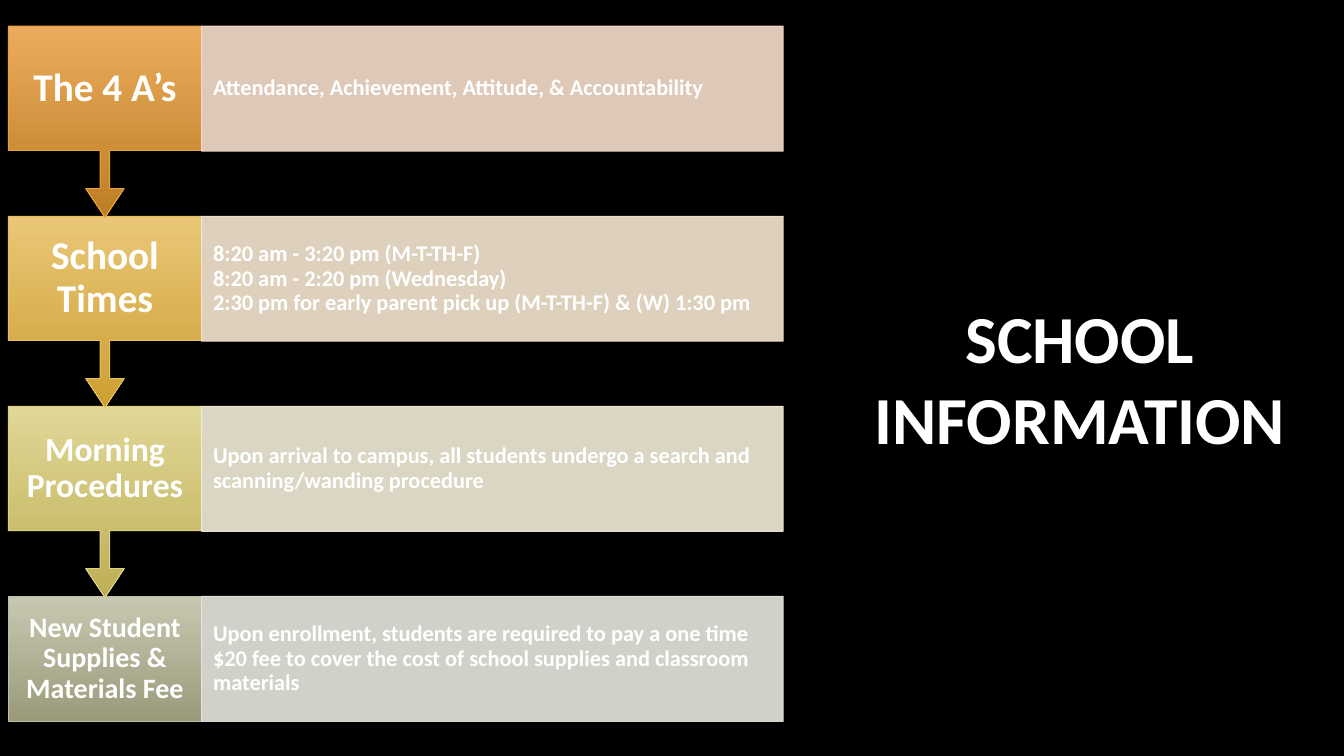
import pptx
import pptx.dml.color
import pptx.enum.shapes
import pptx.enum.text
import pptx.oxml
import pptx.util

SHAPE = pptx.enum.shapes.MSO_SHAPE
ALIGN = pptx.enum.text.PP_ALIGN
ANCHOR = pptx.enum.text.MSO_ANCHOR
EMU_PER_PX = 9525
NS = "http://schemas.openxmlformats.org/drawingml/2006/main"


def px(n):
    return pptx.util.Emu(n * EMU_PER_PX)


def rgb(h):
    return pptx.dml.color.RGBColor.from_string(h)


def set_alpha(fill, color, pct):
    fill.solid()
    fill.fore_color.rgb = rgb(color)
    xml = f'<a:alpha xmlns:a="{NS}" val="{pct * 1000}"/>'
    fill._xPr.find(f"{{{NS}}}solidFill")[0].append(pptx.oxml.parse_xml(xml))


def write(sp, text, size, align=ALIGN.LEFT, spacing=0.9, inset=(11, 21),
          font="Calibri", color="FFFFFF"):
    tf = sp.text_frame
    tf.word_wrap = True
    tf.vertical_anchor = ANCHOR.MIDDLE
    tf.margin_left = tf.margin_right = px(inset[0])
    tf.margin_top = tf.margin_bottom = px(inset[1])
    p = tf.paragraphs[0]
    p.text = text
    p.alignment = align
    p.line_spacing = spacing
    for r in p.runs:
        r.font.name = font
        r.font.size = pptx.util.Pt(size)
        r.font.bold = True
        r.font.color.rgb = rgb(color)


class Deck:
    def __init__(self, background):
        self.prs = pptx.Presentation()
        self.prs.slide_width, self.prs.slide_height = px(1280), px(720)
        self.s = self.prs.slides.add_slide(self.prs.slide_layouts[6])
        self.s.background.fill.solid()
        self.s.background.fill.fore_color.rgb = rgb(background)

    def shape(self, kind, x, y, w, h):
        sp = self.s.shapes.add_shape(kind, px(x), px(y), px(w), px(h))
        sp.shadow.inherit = False
        sp.line.width = pptx.util.Pt(0.75)
        return sp

    def heading(self, x, y, w, h, text, size):
        sp = self.s.shapes.add_textbox(px(x), px(y), px(w), px(h))
        write(sp, text, size, align=ALIGN.CENTER, spacing=1.0, inset=(10, 5))

    def step(self, x, y, w, h, text, size, inset, colors, line, arrow):
        if arrow:
            sp = self.shape(SHAPE.DOWN_ARROW_CALLOUT, x, y, w, 182)
            for i, value in enumerate((0.05, 0.1, 0.15, 0.65)):
                sp.adjustments[i] = value
        else:
            sp = self.shape(SHAPE.RECTANGLE, x, y, w, h)
        sp.fill.gradient()
        sp.fill.gradient_angle = 270
        for stop, position, color in zip(sp.fill.gradient_stops, (0, 1), colors):
            stop.position = position
            stop.color.rgb = rgb(color)
        sp.line.color.rgb = rgb(line)
        write(sp, text, size, align=ALIGN.CENTER, inset=(13, inset))

    def detail(self, x, y, w, h, text, color):
        sp = self.shape(SHAPE.RECTANGLE, x, y, w, h)
        set_alpha(sp.fill, color, 90)
        set_alpha(sp.line.fill, color, 90)
        write(sp, text, 16)


STEPS = [
    ("The 4 A’s", 28, 21, ("EBAB5C", "BD7E25"), "E9A039", "F7DFCE",
     "Attendance, Achievement, Attitude, & Accountability"),
    ("School Times", 28, 21, ("EAC778", "CC9F32"), "E7BF5F", "F6E8D2",
     "8:20 am - 3:20 pm (M-T-TH-F)\n8:20 am - 2:20 pm (Wednesday)\n"
     "2:30 pm for early parent pick up (M-T-TH-F) & (W) 1:30 pm"),
    ("Morning Procedures", 24, 18, ("E1D797", "BDAF55"), "DCD084", "F2EED9",
     "Upon arrival to campus, all students undergo a search and "
     "scanning/wanding procedure"),
    ("New Student Supplies & Materials Fee", 20, 15, ("C8C8B2", "9A9A7B"),
     "BFBFA5", "E8E8E1",
     "Upon enrollment, students are required to pay a one time $20 fee to "
     "cover the cost of school supplies and classroom materials"),
]


def main():
    deck = Deck("000000")
    deck.heading(813, 67, 431, 585, "SCHOOL INFORMATION", 48)
    last = len(STEPS) - 1
    for i in range(last, -1, -1):
        label, size, inset, colors, line, tint, text = STEPS[i]
        y = 25 + 181 * i
        deck.step(8, y, 184, 119, label, size, inset, colors, line, i < last)
        deck.detail(192, y, 554, 119, text, tint)
    deck.prs.save("out.pptx")


if __name__ == "__main__":
    main()
